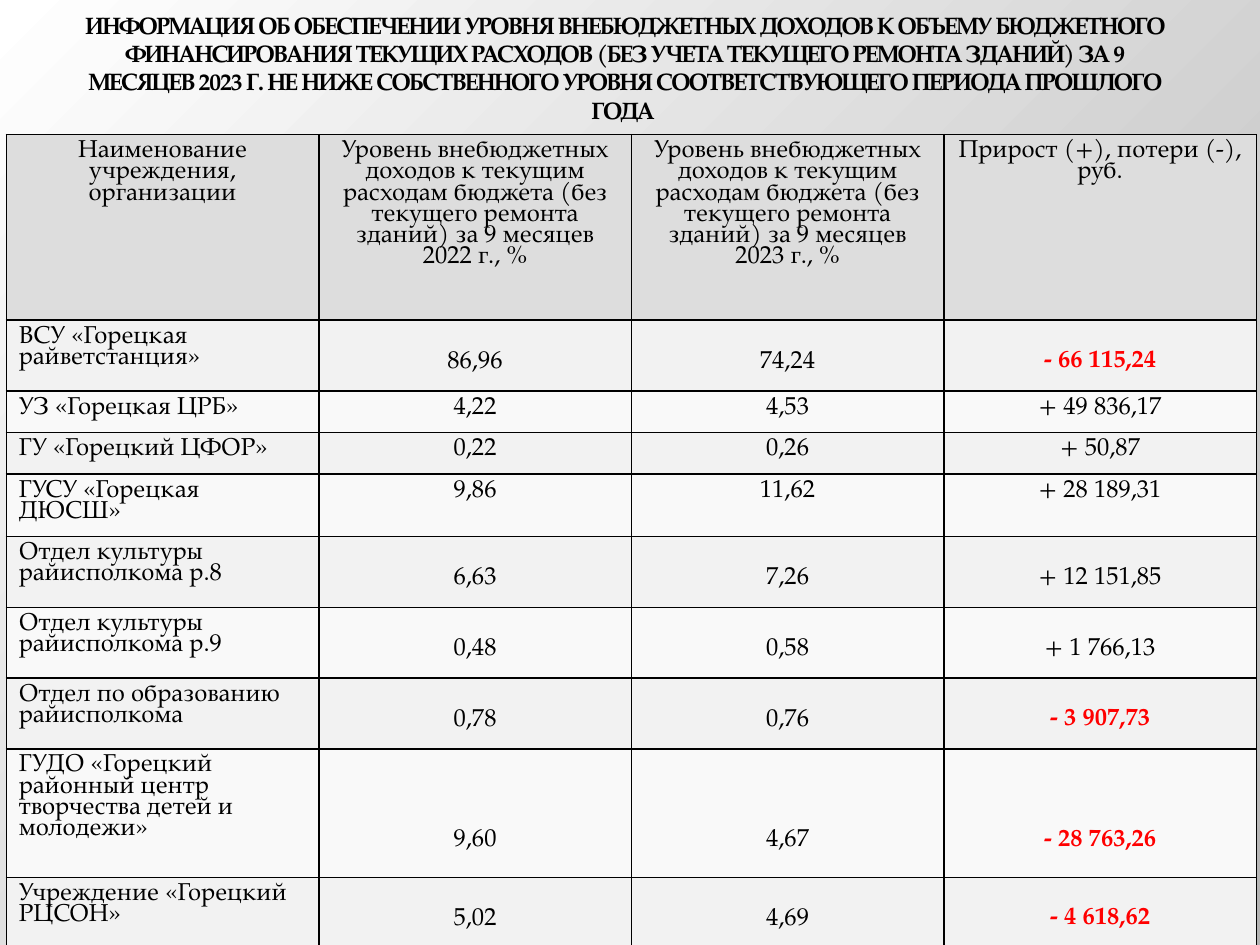
from pptx import Presentation
from pptx.dml.color import RGBColor
from pptx.enum.text import MSO_ANCHOR, MSO_AUTO_SIZE, PP_ALIGN
from pptx.oxml.ns import qn
from pptx.util import Pt
from lxml.etree import SubElement

BLACK = RGBColor(0, 0, 0)
WHITE = RGBColor(255, 255, 255)
RED = RGBColor(255, 0, 0)
GREY = RGBColor(0xB4, 0xB4, 0xB4)
HEADER_FILL = RGBColor(0xDD, 0xDD, 0xDD)
BAND_FILLS = (RGBColor(0xF2, 0xF2, 0xF2), RGBColor(0xF9, 0xF9, 0xF9))

FONT = "TeX Gyre Pagella"
TABLE_SIZE = 14
LINE_SPACING = 0.85
LINE_HEIGHT = 14.28
CELL_MARGIN = 3.6
COLUMN_WIDTH = 178.6
HEADER_HEIGHT = 106

TITLE = (
    "ИНФОРМАЦИЯ ОБ ОБЕСПЕЧЕНИИ УРОВНЯ ВНЕБЮДЖЕТНЫХ ДОХОДОВ К ОБЪЕМУ "
    "БЮДЖЕТНОГО ФИНАНСИРОВАНИЯ ТЕКУЩИХ РАСХОДОВ (БЕЗ УЧЕТА ТЕКУЩЕГО РЕМОНТА "
    "ЗДАНИЙ) ЗА 9 МЕСЯЦЕВ 2023 Г. НЕ НИЖЕ СОБСТВЕННОГО УРОВНЯ "
    "СООТВЕТСТВУЮЩЕГО ПЕРИОДА ПРОШЛОГО ГОДА "
)
LEVEL_HEADING = (
    "Уровень внебюджетных доходов к текущим расходам бюджета "
    "(без текущего ремонта зданий) за 9 месяцев {} г., %"
)
HEADINGS = (
    "Наименование учреждения, организации",
    LEVEL_HEADING.format(2022),
    LEVEL_HEADING.format(2023),
    "Прирост (+), потери (-), руб.",
)
INSTITUTIONS = (
    (40.4, 1, "ВСУ «Горецкая райветстанция»", "86,96", "74,24", "- 66 115,24"),
    (23.8, 0, "УЗ «Горецкая ЦРБ»", "4,22", "4,53", "+ 49 836,17"),
    (23.8, 0, "ГУ «Горецкий ЦФОР»", "0,22", "0,26", "+ 50,87"),
    (35.8, 0, "ГУСУ «Горецкая ДЮСШ»", "9,86", "11,62", "+ 28 189,31"),
    (40.4, 1, "Отдел культуры райисполкома р.8", "6,63", "7,26", "+ 12 151,85"),
    (40.4, 1, "Отдел культуры райисполкома р.9", "0,48", "0,58", "+ 1 766,13"),
    (40.4, 1, "Отдел по образованию райисполкома", "0,78", "0,76", "- 3 907,73"),
    (73.5, 3, "ГУДО «Горецкий районный центр творчества детей и молодежи»",
     "9,60", "4,67", "- 28 763,26"),
    (40.4, 1, "Учреждение «Горецкий РЦСОН»", "5,02", "4,69", "- 4 618,62"),
)


def add_span(para, text, size, color=BLACK, bold=False):
    span = para.add_run()
    span.text = text
    span.font.name = FONT
    span.font.size = Pt(size)
    span.font.bold = bold
    span.font.color.rgb = color
    return span


def paint_background(page):
    fill = page.background.fill
    fill.gradient()
    for stop, color in zip(fill.gradient_stops, (WHITE, GREY)):
        stop.color.rgb = color
    gradient = next(page._element.iter(qn("a:gradFill")))
    gradient.remove(gradient.find(qn("a:lin")))
    circle = SubElement(gradient, qn("a:path"), path="circle")
    SubElement(circle, qn("a:fillToRect"), r="100000", b="100000")


def format_title(page):
    box = page.shapes.title
    box.left, box.top, box.width, box.height = Pt(36.7), Pt(0), Pt(641), Pt(77)
    frame = box.text_frame
    frame.word_wrap = True
    frame.auto_size = MSO_AUTO_SIZE.NONE
    frame.vertical_anchor = MSO_ANCHOR.MIDDLE
    para = frame.paragraphs[0]
    para.alignment = PP_ALIGN.CENTER
    span = add_span(para, TITLE, 13.5, bold=True)
    span._r.get_or_add_rPr().set("spc", "-60")


def add_borders(cell):
    properties = cell._tc.get_or_add_tcPr()
    for index, side in enumerate(("a:lnL", "a:lnR", "a:lnT", "a:lnB")):
        line = properties.makeelement(qn(side), {"w": str(Pt(1))})
        properties.insert(index, line)
        fill = SubElement(line, qn("a:solidFill"))
        SubElement(fill, qn("a:srgbClr"), val=str(BLACK))


def fill_cell(cell, text, fill, alignment, lines_above=0):
    cell.fill.solid()
    cell.fill.fore_color.rgb = fill
    add_borders(cell)
    cell.margin_top = Pt(CELL_MARGIN + lines_above * LINE_HEIGHT)
    cell.margin_bottom = Pt(CELL_MARGIN)
    para = cell.text_frame.paragraphs[0]
    para.alignment = alignment
    para.line_spacing = LINE_SPACING
    loss = text.startswith("-")
    add_span(para, text, TABLE_SIZE, RED if loss else BLACK, loss)


def add_income_table(page):
    heights = [HEADER_HEIGHT] + [row[0] for row in INSTITUTIONS]
    frame = page.shapes.add_table(
        len(heights), len(HEADINGS), Pt(3.6), Pt(77),
        Pt(COLUMN_WIDTH * len(HEADINGS)), Pt(sum(heights)),
    )
    table = frame.table
    for column in table.columns:
        column.width = Pt(COLUMN_WIDTH)
    for row, height in zip(table.rows, heights):
        row.height = Pt(height)
    for column, heading in enumerate(HEADINGS):
        fill_cell(table.cell(0, column), heading, HEADER_FILL, PP_ALIGN.CENTER)
    for index, (_, lines_above, name, *values) in enumerate(INSTITUTIONS):
        fill = BAND_FILLS[index % 2]
        fill_cell(table.cell(index + 1, 0), name, fill, PP_ALIGN.LEFT)
        for column, value in enumerate(values, 1):
            cell = table.cell(index + 1, column)
            fill_cell(cell, value, fill, PP_ALIGN.CENTER, lines_above)


def main():
    deck = Presentation()
    deck.slide_width, deck.slide_height = Pt(720), Pt(540)
    page = deck.slides.add_slide(deck.slide_layouts[5])
    paint_background(page)
    format_title(page)
    add_income_table(page)
    deck.save("out.pptx")


if __name__ == "__main__":
    main()
